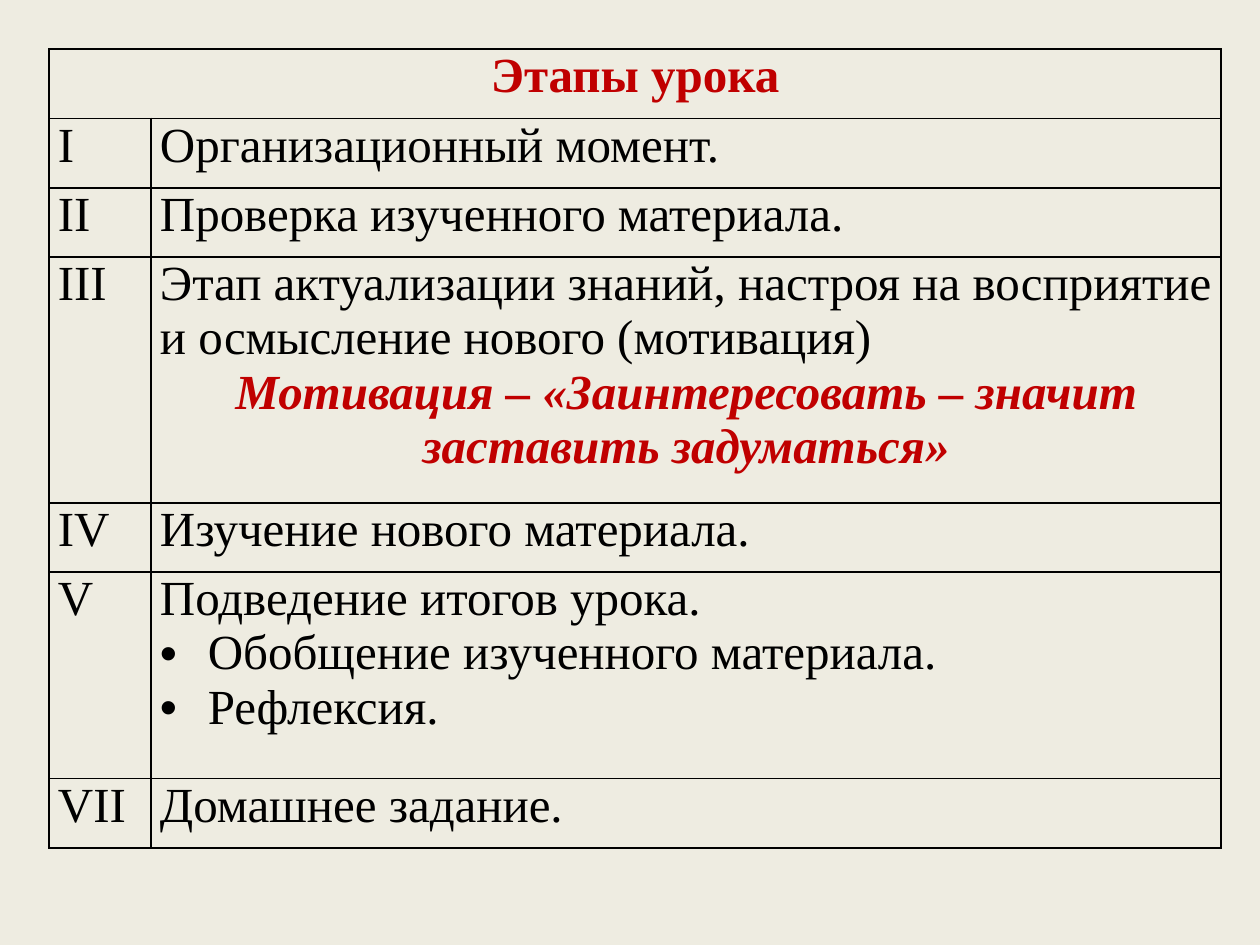
from pptx import Presentation
from pptx.dml.color import RGBColor
from pptx.enum.text import PP_ALIGN as Align
from pptx.oxml.ns import qn
from pptx.util import Inches, Pt
from lxml.etree import SubElement

COLORS = {"background": "EEECE1", "text": "000000", "accent": "C00000", "border": "000000"}
FONT = "Times New Roman"
COLUMN_WIDTHS = [0.81, 8.49]
ROW_HEIGHTS = [0.55, 0.55, 0.55, 1.95, 0.55, 1.64, 0.55]
TITLE = "Этапы урока"
MOTTO = {"color": "accent", "bold": True, "italic": True, "align": Align.CENTER}
JUSTIFIED = {"align": Align.JUSTIFY}
BULLET = {"align": Align.JUSTIFY, "bullet": "•"}
STAGES = [
    ("I", {}, [("Организационный момент.", {})]),
    ("II", {}, [("Проверка изученного материала.", {})]),
    ("III", {}, [
        ("Этап актуализации знаний, настроя на восприятие и осмысление нового (мотивация)", {}),
        ("Мотивация – «Заинтересовать – значит заставить задуматься»", MOTTO),
    ]),
    ("IV", JUSTIFIED, [("Изучение нового материала.", JUSTIFIED)]),
    ("V", JUSTIFIED, [
        ("Подведение итогов урока.", JUSTIFIED),
        ("Обобщение изученного материала.", BULLET),
        ("Рефлексия.", BULLET),
    ]),
    ("VII", JUSTIFIED, [("Домашнее задание.", JUSTIFIED)]),
]


def rgb(name):
    """Return the named colour."""
    return RGBColor.from_string(COLORS[name])


def add_bullet(para, char, indent=0.38):
    """Give a paragraph a hanging bullet."""
    properties = para._p.get_or_add_pPr()
    properties.set("marL", str(Inches(indent)))
    properties.set("indent", str(-Inches(indent)))
    SubElement(properties, qn("a:buFont"), typeface="Arial")
    SubElement(properties, qn("a:buChar"), char=char)


def write_text(para, text, color="text", bold=False, italic=False, align=Align.LEFT, bullet=None):
    """Write one formatted paragraph."""
    para.alignment = align
    if bullet:
        add_bullet(para, bullet)
    span = para.add_run()
    span.text = text
    font = span.font
    font.name, font.size, font.bold, font.italic = FONT, Pt(28), bold, italic
    font.color.rgb = rgb(color)


def fill_cell(cell, lines):
    """Write a list of paragraphs into a cell."""
    frame = cell.text_frame
    for index, (text, style) in enumerate(lines):
        para = frame.add_paragraph() if index else frame.paragraphs[0]
        write_text(para, text, **style)


def style_cell(cell):
    """Set the margins, borders and empty fill of a cell."""
    cell.margin_left = cell.margin_right = Inches(0.07)
    cell.margin_top = cell.margin_bottom = 0
    properties = cell._tc.get_or_add_tcPr()
    for side in ("lnL", "lnR", "lnT", "lnB"):
        line = SubElement(properties, qn(f"a:{side}"), w=str(Pt(1)))
        fill = SubElement(line, qn("a:solidFill"))
        SubElement(fill, qn("a:srgbClr"), val=COLORS["border"])
    cell.fill.background()


def add_stage_table(slide):
    """Add the table of lesson stages."""
    table = slide.shapes.add_table(
        len(ROW_HEIGHTS), len(COLUMN_WIDTHS), Inches(0.39), Inches(0.39),
        Inches(sum(COLUMN_WIDTHS)), Inches(sum(ROW_HEIGHTS))).table
    table.first_row = table.horz_banding = False
    for column, width in zip(table.columns, COLUMN_WIDTHS):
        column.width = Inches(width)
    for row, height in zip(table.rows, ROW_HEIGHTS):
        row.height = Inches(height)
    for cell in table.iter_cells():
        style_cell(cell)
    table.cell(0, 0).merge(table.cell(0, 1))
    fill_cell(table.cell(0, 0), [(TITLE, {"color": "accent", "bold": True, "align": Align.CENTER})])
    for row, (number, style, lines) in enumerate(STAGES, start=1):
        fill_cell(table.cell(row, 0), [(number, style)])
        fill_cell(table.cell(row, 1), lines)


def main():
    """Build and save the slide."""
    deck = Presentation()
    deck.slide_width, deck.slide_height = Inches(10), Inches(7.5)
    slide = deck.slides.add_slide(deck.slide_layouts[6])
    slide.background.fill.solid()
    slide.background.fill.fore_color.rgb = rgb("background")
    add_stage_table(slide)
    deck.save("out.pptx")


if __name__ == "__main__":
    main()
